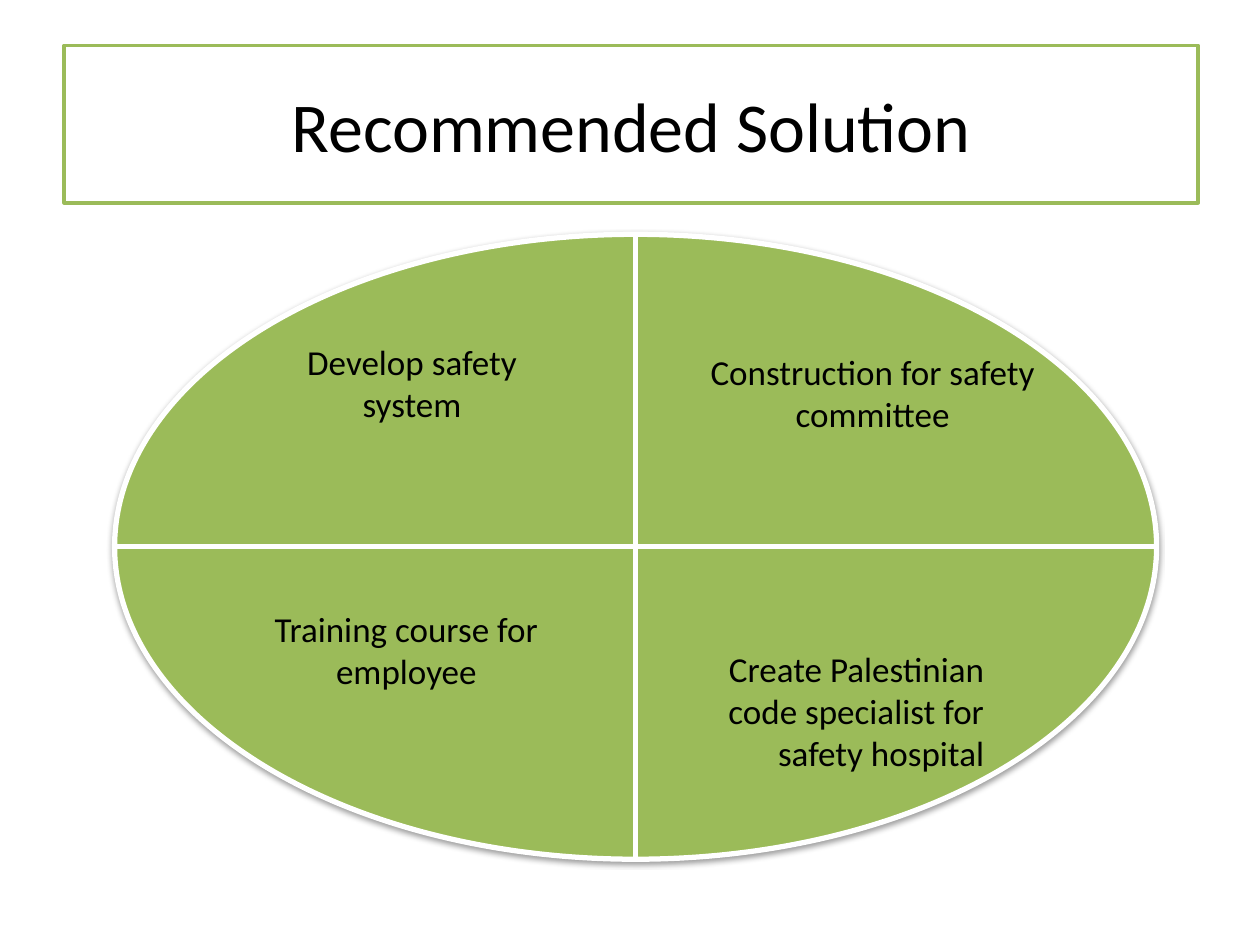
from dataclasses import dataclass

from lxml.etree import SubElement
from pptx import Presentation
from pptx.dml.color import RGBColor
from pptx.enum.shapes import MSO_SHAPE
from pptx.enum.text import MSO_ANCHOR, MSO_AUTO_SIZE, PP_ALIGN
from pptx.oxml.ns import qn
from pptx.util import Inches, Pt

# The slide is a grid of 100 columns by 75 rows
COLUMNS, ROWS = 100, 75
CELL = Inches(0.1)
FONT = "Calibri"
GREEN, WHITE, BLACK = "9BBB59", "FFFFFF", "000000"


@dataclass
class Area:
    column: float
    row: float
    columns: float
    rows: float

    def place(self) -> tuple[int, ...]:
        return tuple(round(cells * CELL) for cells in
                     (self.column, self.row, self.columns, self.rows))


@dataclass
class Solution:
    text: str
    area: Area
    align: PP_ALIGN = PP_ALIGN.CENTER


TITLE_AREA = Area(5.1, 3.6, 90, 12.5)
OVAL_AREA = Area(9.1, 18.6, 82.7, 49.6)
SOLUTIONS = [
    Solution("Develop safety system", Area(20.9, 26.5, 23.6, 7.7)),
    Solution("Construction for safety committee", Area(54.7, 27.3, 29.1, 11.1)),
    Solution("Training course for employee", Area(16.9, 47.7, 30.7, 7.7)),
    Solution("Create Palestinian code specialist for safety hospital",
             Area(55.5, 50.9, 23.6, 11.1), PP_ALIGN.RIGHT),
]


def color(value: str) -> RGBColor:
    return RGBColor.from_string(value)


def add_figure(page, kind: MSO_SHAPE, area: Area, fill: str, line: str, weight: float):
    figure = page.shapes.add_shape(kind, *area.place())
    figure.shadow.inherit = False
    figure.fill.solid()
    figure.fill.fore_color.rgb = color(fill)
    figure.line.color.rgb = color(line)
    figure.line.width = Pt(weight)
    return figure


def write(box, text: str, size: float, align: PP_ALIGN = PP_ALIGN.CENTER) -> None:
    """Set one right-to-left paragraph in the box."""
    box.text_frame.word_wrap = True
    para = box.text_frame.paragraphs[0]
    para.text = text
    para.alignment = align
    para.font.name = FONT
    para.font.size = Pt(size)
    para.font.color.rgb = color(BLACK)
    para._p.get_or_add_pPr().set("rtl", "1")


def add_shadow(figure, blur: float, distance: float, opacity: int) -> None:
    """Drop a soft black shadow straight down."""
    effects = figure._element.spPr.find(qn("a:effectLst"))
    shadow = SubElement(effects, qn("a:outerShdw"), blurRad=str(Pt(blur)),
                        dist=str(Pt(distance)), dir="5400000", rotWithShape="0")
    tint = SubElement(shadow, qn("a:srgbClr"), val=BLACK)
    SubElement(tint, qn("a:alpha"), val=str(opacity * 1000))


def add_solution(page, solution: Solution) -> None:
    box = page.shapes.add_textbox(*solution.area.place())
    write(box, solution.text, 20, solution.align)
    box.text_frame.auto_size = MSO_AUTO_SIZE.SHAPE_TO_FIT_TEXT


def main() -> None:
    deck = Presentation()
    deck.slide_width, deck.slide_height = COLUMNS * CELL, ROWS * CELL
    page = deck.slides.add_slide(deck.slide_layouts[6])

    # Framed title
    title = add_figure(page, MSO_SHAPE.RECTANGLE, TITLE_AREA, WHITE, GREEN, 2)
    title.text_frame.vertical_anchor = MSO_ANCHOR.MIDDLE
    write(title, "Recommended Solution", 40)

    # Oval in four quarters
    oval = add_figure(page, MSO_SHAPE.FLOWCHART_OR, OVAL_AREA, GREEN, WHITE, 3)
    add_shadow(oval, 3.1, 1.6, 38)

    # One solution in each quarter
    for solution in SOLUTIONS:
        add_solution(page, solution)

    deck.save("out.pptx")


if __name__ == "__main__":
    main()
